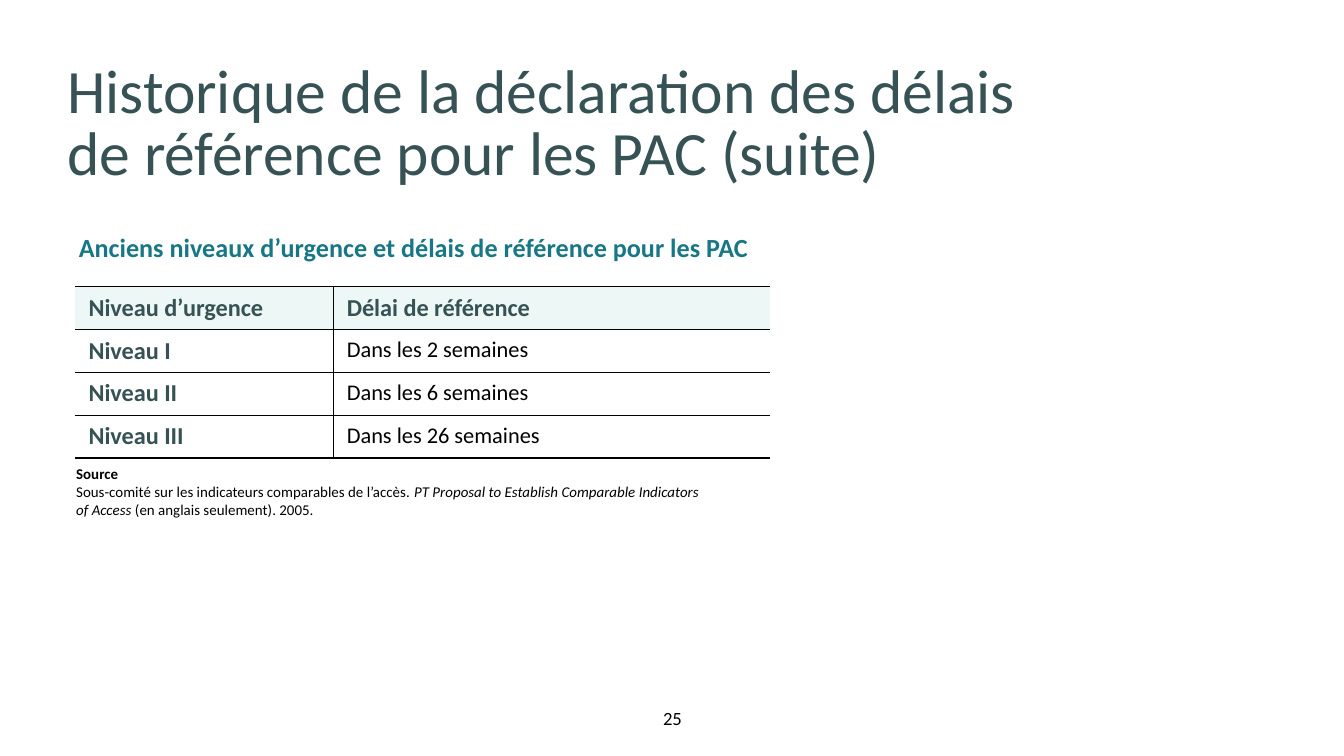
from dataclasses import dataclass

from lxml import etree
from pptx import Presentation
from pptx.dml.color import RGBColor
from pptx.enum.text import MSO_ANCHOR, PP_ALIGN
from pptx.oxml.ns import qn
from pptx.util import Cm, Pt

LEFT, CENTER = PP_ALIGN.LEFT, PP_ALIGN.CENTER
TOP, MIDDLE = MSO_ANCHOR.TOP, MSO_ANCHOR.MIDDLE
FONT = "Calibri"
COLORS = {"slate": "365254", "teal": "177784", "mint": "EDF7F5",
          "black": "000000", "white": "FFFFFF"}
COL_WIDTHS = (4.88, 8.25)
ROW_HEIGHT = 0.81


@dataclass
class Box:
    """Position and size in centimetres."""
    left: float
    top: float
    width: float
    height: float

    def lengths(self) -> tuple:
        return Cm(self.left), Cm(self.top), Cm(self.width), Cm(self.height)


@dataclass
class Level:
    name: str
    target: str


LEVELS = [
    Level("Niveau d’urgence", "Délai de référence"),
    Level("Niveau I", "Dans les 2 semaines"),
    Level("Niveau II", "Dans les 6 semaines"),
    Level("Niveau III", "Dans les 26 semaines"),
]


def write(p, text: str, *, size: float, color: str = "black",
          bold: bool = False, italic: bool = False) -> None:
    """Append formatted text to a paragraph; a newline is a line break."""
    for i, line in enumerate(text.split("\n")):
        if i:
            p.add_line_break()
        r = p.add_run()
        r.text = line
        r.font.name = FONT
        r.font.size = Pt(size)
        r.font.bold = bold
        r.font.italic = italic
        r.font.color.rgb = RGBColor.from_string(COLORS[color])


def add_box(s, box: Box, *, inset: bool = True, anchor=TOP, align=LEFT):
    """Add an empty wrapping text box and return its text frame."""
    tf = s.shapes.add_textbox(*box.lengths()).text_frame
    tf.word_wrap = True
    tf.vertical_anchor = anchor
    if not inset:
        tf.margin_left = tf.margin_right = tf.margin_top = tf.margin_bottom = 0
    tf.paragraphs[0].alignment = align
    return tf


def set_borders(cell, **widths: float) -> None:
    """Set the cell's border widths in points; zero means no line."""
    tc_pr = cell._tc.get_or_add_tcPr()
    for i, side in enumerate("LRTB"):
        width = widths.get(side, 0)
        ln = etree.Element(qn(f"a:ln{side}"), w=str(int(Pt(width))))
        if width:
            fill = etree.SubElement(ln, qn("a:solidFill"))
            etree.SubElement(fill, qn("a:srgbClr"), val=COLORS["black"])
        else:
            etree.SubElement(ln, qn("a:noFill"))
        tc_pr.insert(i, ln)


def add_levels_table(s, left: float, top: float, levels: list[Level]) -> None:
    box = Box(left, top, sum(COL_WIDTHS), ROW_HEIGHT * len(levels))
    table = s.shapes.add_table(len(levels), 2, *box.lengths()).table
    table.horz_banding = False
    for column, width in zip(table.columns, COL_WIDTHS):
        column.width = Cm(width)
    last = len(levels) - 1
    for i, level in enumerate(levels):
        table.rows[i].height = Cm(ROW_HEIGHT)
        for j, text in enumerate((level.name, level.target)):
            cell = table.cell(i, j)
            cell.fill.solid()
            fill = COLORS["white" if i else "mint"]
            cell.fill.fore_color.rgb = RGBColor.from_string(fill)
            heading = i == 0 or j == 0
            write(cell.text_frame.paragraphs[0], text, bold=heading,
                  size=13 if heading else 12,
                  color="slate" if heading else "black")
            set_borders(cell, L=0.5 * j, R=0.5 * (1 - j),
                        T=0.5 if i else 1, B=1 if i == last else 0.5)


def main() -> None:
    prs = Presentation()
    prs.slide_width, prs.slide_height = Cm(25.4), Cm(14.28)
    s = prs.slides.add_slide(prs.slide_layouts[6])

    # Page number
    tf = add_box(s, Box(11.91, 13.34, 1.6, 0.43), inset=False,
                 anchor=MIDDLE, align=CENTER)
    write(tf.paragraphs[0], "25", size=10)

    # Title
    tf = add_box(s, Box(1.27, 1.22, 22.86, 2.36), inset=False)
    tf.paragraphs[0].line_spacing = Pt(33)
    write(tf.paragraphs[0], "Historique de la déclaration des délais \n"
          "de référence pour les PAC (suite)", size=33, color="slate")

    # Table heading and table
    tf = add_box(s, Box(1.24, 4.24, 14.6, 0.86))
    write(tf.paragraphs[0],
          "Anciens niveaux d’urgence et délais de référence pour les PAC",
          size=14, color="teal", bold=True)
    add_levels_table(s, 1.42, 5.41, LEVELS)

    # Source
    tf = add_box(s, Box(1.19, 8.66, 13.34, 1.27))
    write(tf.paragraphs[0], "Source", size=8, bold=True)
    p = tf.add_paragraph()
    write(p, "Sous-comité sur les indicateurs comparables de l’accès. ", size=8)
    write(p, "PT Proposal to Establish Comparable Indicators \nof Access ",
          size=8, italic=True)
    write(p, "(en anglais seulement). 2005.", size=8)

    prs.save("out.pptx")


if __name__ == "__main__":
    main()
